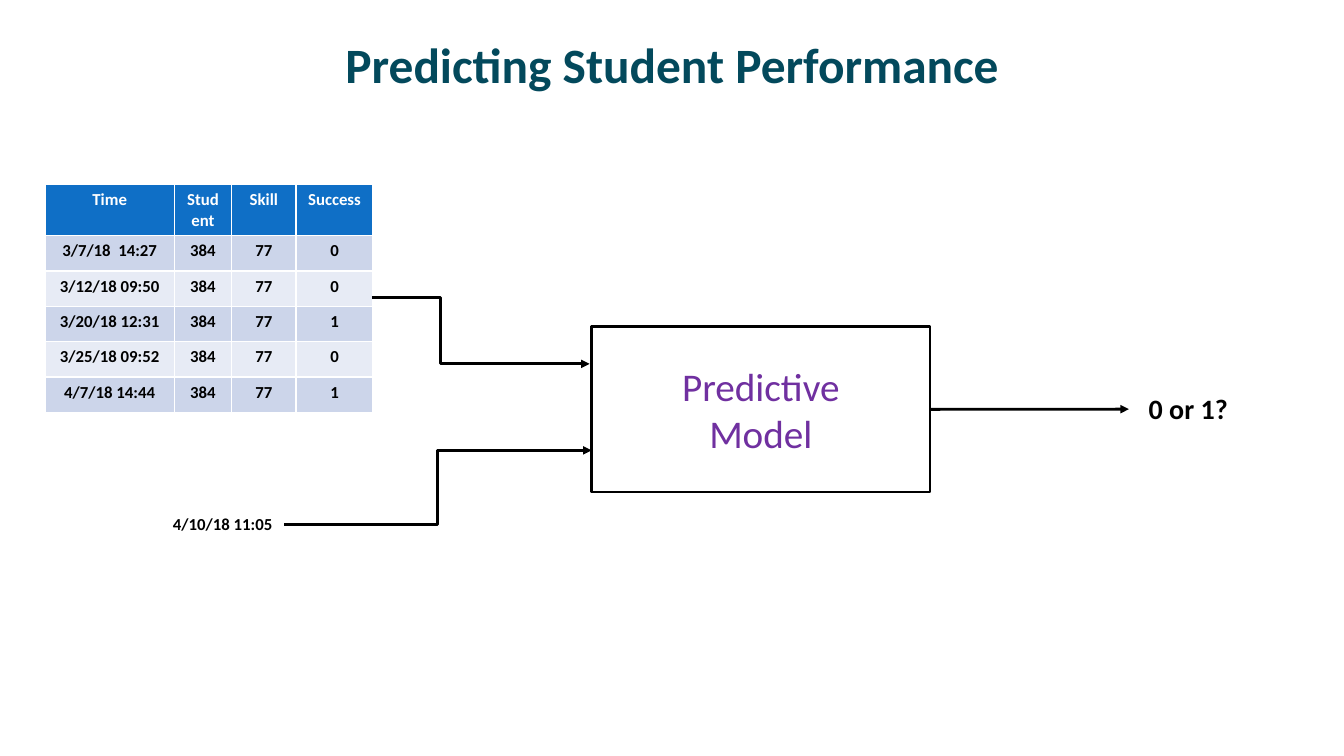
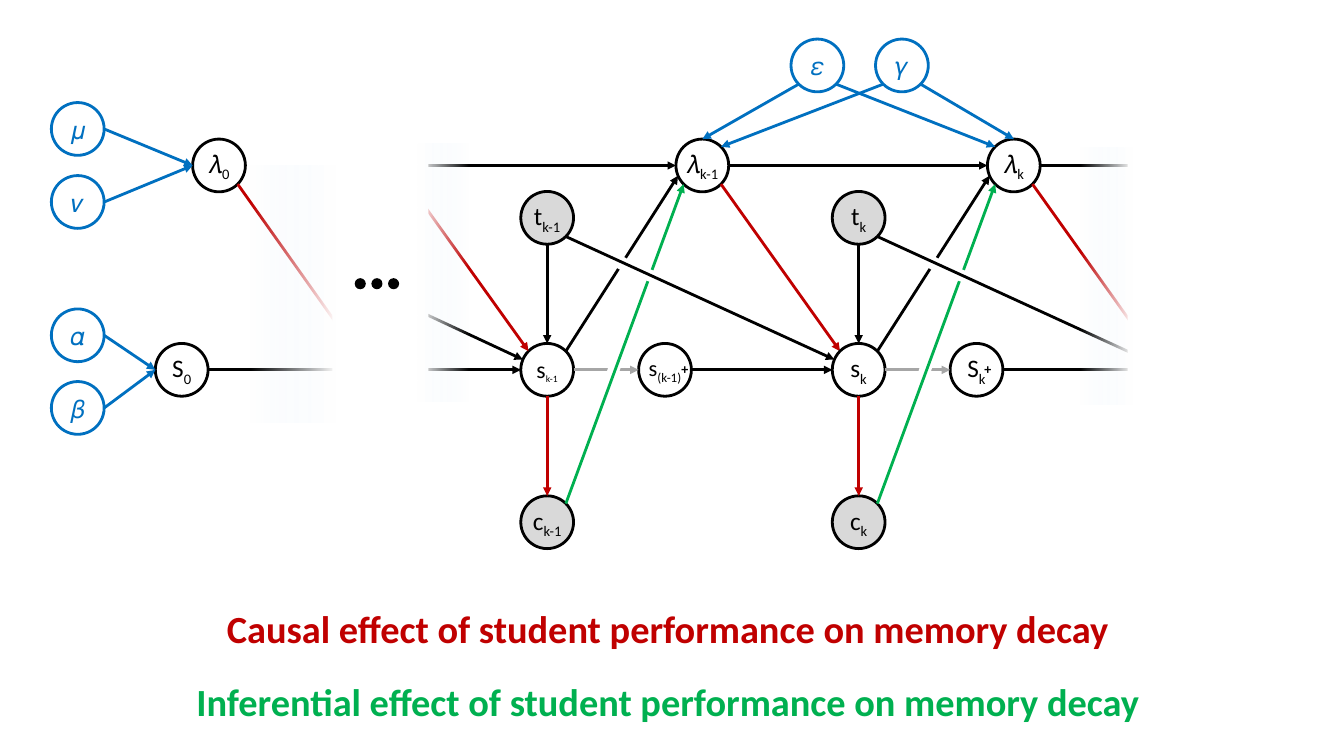
from math import cos, radians, sin

from lxml import etree
from pptx import Presentation
from pptx.dml.color import RGBColor
from pptx.enum.shapes import MSO_CONNECTOR as CXN, MSO_SHAPE as SHAPE
from pptx.enum.text import MSO_ANCHOR as ANCHOR, PP_ALIGN as ALIGN
from pptx.oxml.ns import qn
from pptx.util import Cm, Pt

FONT = "Calibri"
COLORS = {
    "title": "03495C", "black": "000000", "white": "FFFFFF", "grey": "A6A6A6",
    "observed": "D9D9D9", "blue": "0070C0", "red": "C00000", "green": "00B050",
    "purple": "7030A0", "header": "0F6FC6", "odd": "CCD5EA", "even": "E7EBF5",
    "fade": "F1F8FE",
}

# Compass directions as clockwise angles from east
E, SE, S, SW, WSW, W, WNW, NW, N, NE = 0, 45, 90, 135, 157, 180, 203, 225, 270, 315

NODE = 1.33             # node diameter
STEP = 7.85             # distance between two time steps
STEP_X = 13.79          # first time step
DECAY_Y, TIME_Y, STATE_Y, CORRECT_Y = 4.17, 5.49, 9.32, 13.16


def color(name):
    return RGBColor.from_string(COLORS[name])


def set_font(target, size, name="black", bold=False):
    f = target.font
    f.name, f.size, f.bold = FONT, Pt(size), bold
    f.color.rgb = color(name)


def add_shape(s, kind, left, top, width, height, fill=None, line=None):
    sp = s.shapes.add_shape(kind, Cm(left), Cm(top), Cm(width), Cm(height))
    sp.shadow.inherit = False
    if fill:
        sp.fill.solid()
        sp.fill.fore_color.rgb = color(fill)
    else:
        sp.fill.background()
    if line:
        sp.line.color.rgb = color(line)
        sp.line.width = Pt(2)
    else:
        sp.line.fill.background()
    return sp


def add_line(s, start, end, name="black", head=True, bend=None):
    """Draw a line; bend is the share of the width at which an elbow turns."""
    kind = CXN.STRAIGHT if bend is None else CXN.ELBOW
    cxn = s.shapes.add_connector(kind, *(Cm(v) for v in (*start, *end)))
    cxn.line.color.rgb = color(name)
    cxn.line.width = Pt(2)
    if head:
        etree.SubElement(cxn.get_or_add_ln(), qn("a:tailEnd"), type="triangle")
    sp_pr = cxn._element.spPr
    etree.SubElement(sp_pr, qn("a:effectLst"))
    if bend is not None:
        guides = sp_pr.find(qn("a:prstGeom")).get_or_add_avLst()
        etree.SubElement(guides, qn("a:gd"), name="adj1",
                         fmla=f"val {round(bend * 100000)}")
    return cxn


def add_label(s, text, left, top, width, height, size):
    tb = s.shapes.add_textbox(Cm(left), Cm(top), Cm(width), Cm(height))
    tf = tb.text_frame
    tf.word_wrap = False
    p = tf.paragraphs[0]
    p.text = text
    set_font(p, size, bold=True)


def place(sp, left, top, width, height):
    sp.left, sp.top, sp.width, sp.height = (Cm(v) for v in (left, top, width, height))


def add_log_table(s, left, top, widths, rows):
    heights = [1.29] + [0.89] * (len(rows) - 1)
    table = s.shapes.add_table(len(rows), len(widths), Cm(left), Cm(top),
                               Cm(sum(widths)), Cm(sum(heights))).table
    for column, width in zip(table.columns, widths):
        column.width = Cm(width)
    for i, (row, height, texts) in enumerate(zip(table.rows, heights, rows)):
        row.height = Cm(height)
        fill = "header" if i == 0 else "odd" if i % 2 else "even"
        for cell, text in zip(row.cells, texts):
            cell.fill.solid()
            cell.fill.fore_color.rgb = color(fill)
            p = cell.text_frame.paragraphs[0]
            p.text = text
            p.alignment = ALIGN.CENTER
            set_font(p, 12, "black" if i else "white", bold=True)


def add_node(s, centre, text, sub="", fill=None, name="black", size=18, sub_size=None):
    """Draw a labelled circle and return its centre."""
    x, y = centre
    sp = add_shape(s, SHAPE.OVAL, x - NODE / 2, y - NODE / 2, NODE, NODE, fill, name)
    tf = sp.text_frame
    tf.margin_left = tf.margin_right = tf.margin_top = tf.margin_bottom = 0
    tf.vertical_anchor = ANCHOR.MIDDLE
    tf.word_wrap = False
    p = tf.paragraphs[0]
    p.alignment = ALIGN.CENTER
    r = p.add_run()
    r.text = text
    set_font(r, size, name)
    if sub:
        r = p.add_run()
        r.text = sub
        set_font(r, sub_size or size, name)
        r._r.get_or_add_rPr().set("baseline", "-25000")
    return centre


def port(centre, angle):
    """Return the point on a node's outline in the given direction."""
    a = radians(angle)
    return centre[0] + NODE / 2 * cos(a), centre[1] + NODE / 2 * sin(a)


def link(s, source, leave, target, enter, name="black"):
    add_line(s, port(source, leave), port(target, enter), name)


def add_gap(s, x, y, angle):
    """Interrupt a line where another one crosses it."""
    sp = add_shape(s, SHAPE.RECTANGLE, x - 0.15, y - 0.17, 0.3, 0.33, "white")
    sp.rotation = angle


def add_fade(s, left, top, width, angle):
    sp = add_shape(s, SHAPE.RECTANGLE, left, top, width, 6.48)
    sp.fill.gradient()
    sp.fill.gradient_angle = angle
    clear, solid = sp.fill.gradient_stops
    clear.position, solid.position = 0, 1
    clear.color.rgb = color("fade")
    solid.color.rgb = color("white")
    rgb = next(sp._element.spPr.iter(qn("a:srgbClr")))
    etree.SubElement(rgb, qn("a:alpha"), val="0")


def add_time_step(s, x, sub, state, after, plus_x):
    """Draw one time step and return its decay node."""
    next_state = x + STEP, STATE_Y
    time = add_node(s, (x, TIME_Y), "t", sub, "observed")
    now = add_node(s, (x, STATE_Y), **state)
    correct = add_node(s, (x, CORRECT_Y), "c", sub, "observed")
    later = add_node(s, (x + 2.97, STATE_Y), **after)
    decay = add_node(s, (x + 3.91, DECAY_Y), "𝜆", sub)
    add_label(s, "+", plus_x, 8.96, 0.69, 0.69, 10)

    link(s, time, S, now, N)
    link(s, now, S, correct, N, "red")
    link(s, now, E, later, W, "grey")
    link(s, later, E, next_state, W)
    link(s, decay, SE, next_state, NW, "red")
    add_gap(s, x + 1.68, 9.31, 18.5)
    link(s, correct, NE, decay, SW, "green")
    link(s, now, NE, decay, WSW)
    add_gap(s, x + 1.88, 6.64, 30)
    add_gap(s, x + 2.59, 6.95, 111.1)
    link(s, time, SE, next_state, WNW)
    return decay


def build_prediction_slide(prs):
    s = prs.slides.add_slide(prs.slide_layouts[5])
    title = s.shapes.title
    place(title, 1.7, 0.43, 30.48, 2.34)
    title.text_frame.vertical_anchor = ANCHOR.MIDDLE
    p = title.text_frame.paragraphs[0]
    p.text = "Predicting Student Performance"
    p.alignment = ALIGN.CENTER
    set_font(p, 35.3, "title", bold=True)

    attempts = [("3/7/18  14:27", "0"), ("3/12/18 09:50", "0"), ("3/20/18 12:31", "1"),
                ("3/25/18 09:52", "0"), ("4/7/18 14:44", "1")]
    rows = [("Time", "Student", "Skill", "Success")]
    rows += [(time, "384", "77", success) for time, success in attempts]
    add_log_table(s, 1.14, 4.65, [3.25, 1.45, 1.62, 1.94], rows)

    model = add_shape(s, SHAPE.RECTANGLE, 14.91, 8.23, 8.53, 4.17, "white", "black")
    tf = model.text_frame
    tf.vertical_anchor = ANCHOR.MIDDLE
    tf.text = "Predictive\nModel"
    for p in tf.paragraphs:
        p.alignment = ALIGN.CENTER
        set_font(p, 28, "purple")

    add_label(s, "4/10/18 11:05", 4.11, 12.83, 3.05, 0.76, 12)
    add_label(s, "0 or 1?", 28.7, 9.75, 2.51, 1.12, 20)
    add_line(s, (9.37, 7.49), (14.86, 9.17), bend=0.315)
    add_line(s, (7.16, 13.21), (14.91, 11.35), bend=0.5)
    output = add_line(s, (23.44, 10.31), (28.45, 10.31))
    output.begin_connect(model, 3)


def add_start(s):
    """Draw the initial nodes with their priors, and the lines leaving them."""
    state = add_node(s, (4.58, STATE_Y), "S", "0")
    decay = add_node(s, (5.52, DECAY_Y), "𝜆", "0")
    add_line(s, port(state, E), (8.84, STATE_Y), head=False)
    add_line(s, port(decay, SE), (8.84, 8.66), "red", head=False)
    for text, y, target in (("𝜇", 3.25, decay), ("𝜈", 5.09, decay),
                            ("𝛼", 8.45, state), ("𝛽", 10.28, state)):
        prior = add_node(s, (1.96, y), text, name="blue")
        link(s, prior, E, target, W, "blue")


def add_masks(s):
    """Let the lines fade out where the chain is cut."""
    for box in ((8.51, 3.51, 2.29, 6.48), (8.38, 5.11, 1.5, 6.6),
                (28.42, 2.69, 2.24, 9.42)):
        add_shape(s, SHAPE.RECTANGLE, *box, "white")
    add_fade(s, 10.52, 3.63, 1.3, 180)
    add_fade(s, 6.32, 4.17, 2.13, 0)
    add_fade(s, 27.23, 3.71, 1.3, 0)


def build_memory_slide(prs):
    s = prs.slides.add_slide(prs.slide_layouts[1])
    title = s.shapes.title._element
    title.getparent().remove(title)

    first_state = STEP_X, STATE_Y
    previous = add_time_step(s, STEP_X, "k-1",
                             dict(text="s", sub="k-1", size=17, sub_size=12),
                             dict(text="s", sub="(k-1)", size=16), 16.92)
    current = add_time_step(s, STEP_X + STEP, "k", dict(text="s", sub="k"),
                            dict(text="S", sub="k"), 24.56)
    link(s, previous, E, current, W)
    add_line(s, port(current, E), (29.39, DECAY_Y))
    add_line(s, (10.49, DECAY_Y), port(previous, W))
    add_line(s, (10.29, 4.62), port(first_state, NW), "red")
    add_line(s, (10.41, 7.77), port(first_state, WNW))
    add_line(s, (10.49, STATE_Y), port(first_state, W))
    add_start(s)
    add_masks(s)

    epsilon = add_node(s, (20.6, 1.65), "𝜀", name="blue")
    gamma = add_node(s, (22.73, 1.65), "𝛾", name="blue")
    for source, leave, target, enter in ((gamma, SE, current, N), (epsilon, SW, previous, N),
                                         (epsilon, SE, current, NW), (gamma, SW, previous, NE)):
        link(s, source, leave, target, enter, "blue")
    for i in range(3):
        add_shape(s, SHAPE.OVAL, 8.94 + 0.42 * i, 7.01, 0.28, 0.28, "black")

    body = s.placeholders[1]
    place(body, 1.3, 15.11, 31.04, 3.9)
    tf = body.text_frame
    tf.vertical_anchor = ANCHOR.TOP
    tf.text = ("Causal effect of student performance on memory decay\n"
               "Inferential effect of student performance on memory decay")
    for p, name in zip(tf.paragraphs, ("red", "green")):
        p.alignment = ALIGN.CENTER
        p.space_before = Pt(19.5)
        set_font(p, 27.4, name, bold=True)
        p_pr = p._p.get_or_add_pPr()
        p_pr.set("marL", "0")
        p_pr.set("indent", "0")
        p_pr.find(qn("a:spcBef")).addnext(etree.Element(qn("a:buNone")))


def main():
    prs = Presentation()
    prs.slide_width, prs.slide_height = Cm(33.87), Cm(19.05)
    build_prediction_slide(prs)
    build_memory_slide(prs)
    prs.save("out.pptx")


if __name__ == "__main__":
    main()
